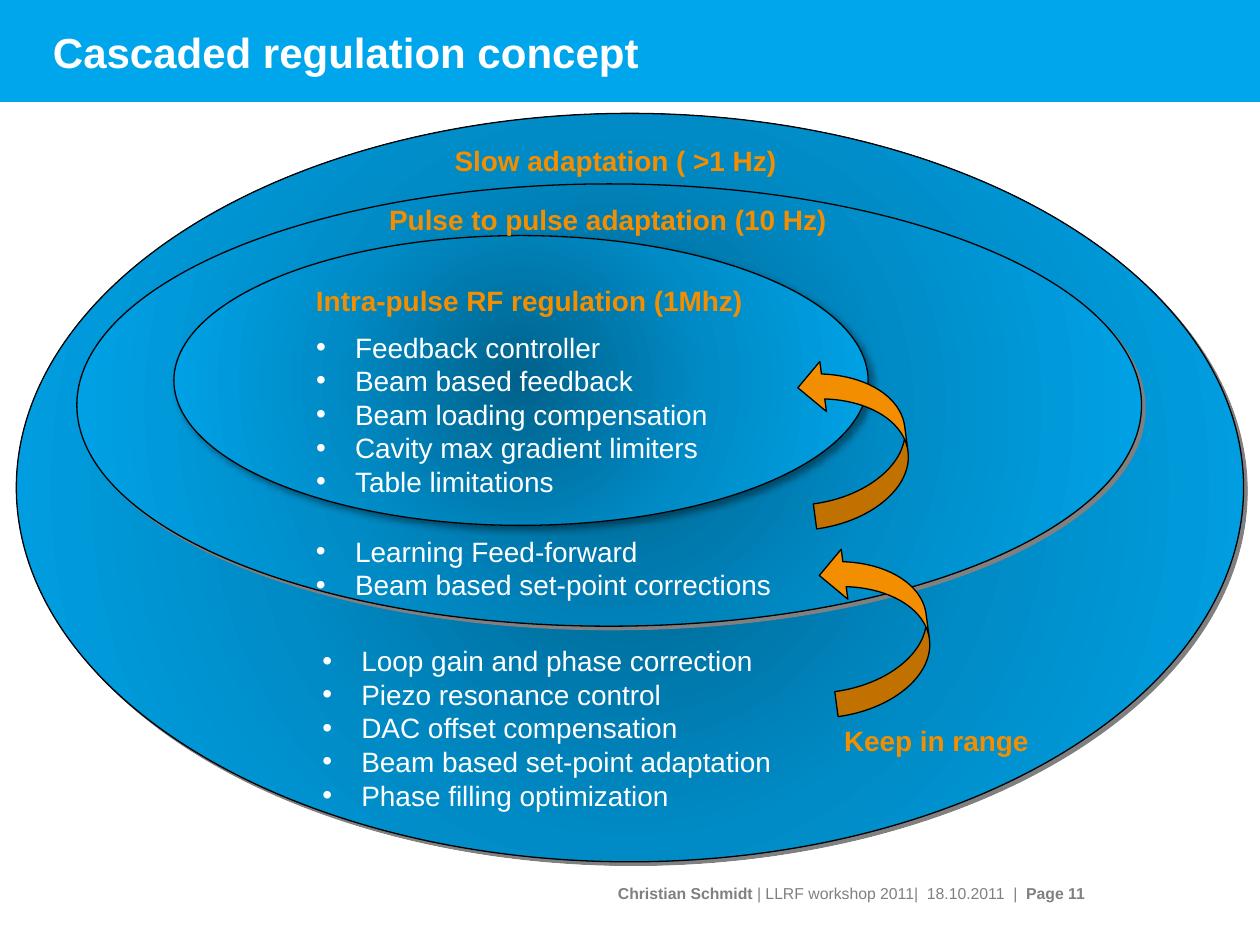
import lxml.etree
import pptx
import pptx.dml.color
import pptx.enum.shapes
import pptx.enum.text
import pptx.oxml
import pptx.oxml.ns
import pptx.util

Inches = pptx.util.Inches
Pt = pptx.util.Pt
Shape = pptx.enum.shapes.MSO_SHAPE
Align = pptx.enum.text.PP_ALIGN
Anchor = pptx.enum.text.MSO_ANCHOR
AutoSize = pptx.enum.text.MSO_AUTO_SIZE

FONT = "Arial"
BLUE, ORANGE, WHITE, BLACK, GREY = "00A6EB", "F28E00", "FFFFFF", "000000", "808080"
GRADIENT = [(0, "00628B"), (50, "008BC6"), (100, "00A5EB")]

# left, top, width, height, shadow colour, opacity %, blur pt, distance pt
LOOPS = [
    (0.13, 0.9, 9.74, 5.94, GREY, 100, 0, 2.8),
    (0.61, 1.46, 8.45, 3.51, GREY, 100, 0, 2.8),
    (1.38, 1.87, 5.51, 2.3, BLACK, 40, 4, 3),
]
LABELS = [
    (3.51, 1.09, 2.79, "Slow adaptation ( >1 Hz)"),
    (2.99, 1.56, 3.72, "Pulse to pulse adaptation (10 Hz)"),
    (2.41, 2.2, 3.63, "Intra-pulse RF regulation (1Mhz)"),
    (6.6, 5.69, 1.69, "Keep in range"),
]
LISTS = [
    (2.41, 2.57, 3.35, ["Feedback controller", "Beam based feedback",
                        "Beam loading compensation",
                        "Cavity max gradient limiters", "Table limitations"]),
    (2.41, 4.19, 3.86, ["Learning Feed-forward", "Beam based set-point corrections"]),
    (2.46, 5.06, 3.81, ["Loop gain and phase correction", "Piezo resonance control",
                        "DAC offset compensation", "Beam based set-point adaptation",
                        "Phase filling optimization"]),
]
ARROWS = [(6.39, 2.82), (6.56, 4.31)]


def rgb(value):
    return pptx.dml.color.RGBColor.from_string(value)


def set_font(font, size, color, bold=None):
    font.name = FONT
    font.size = Pt(size)
    font.color.rgb = rgb(color)
    font.bold = bold


def add_filled_shape(slide, kind, left, top, width, height, color, outlined=True):
    shape = slide.shapes.add_shape(
        kind, Inches(left), Inches(top), Inches(width), Inches(height))
    shape.shadow.inherit = False
    shape.fill.solid()
    shape.fill.fore_color.rgb = rgb(color)
    if outlined:
        shape.line.color.rgb = rgb(BLACK)
        shape.line.width = Pt(0.75)
    else:
        shape.line.fill.background()
    return shape


def set_radial_gradient(shape):
    stops = "".join(
        f'<a:gs pos="{position * 1000}"><a:srgbClr val="{color}"/></a:gs>'
        for position, color in GRADIENT)
    gradient = pptx.oxml.parse_xml(
        f'<a:gradFill {pptx.oxml.ns.nsdecls("a")} rotWithShape="1">'
        f'<a:gsLst>{stops}</a:gsLst><a:path path="circle">'
        '<a:fillToRect l="50000" t="50000" r="50000" b="50000"/>'
        '</a:path></a:gradFill>')
    properties = shape.element.spPr
    properties.replace(properties.find(pptx.oxml.ns.qn("a:solidFill")), gradient)


def set_shadow(shape, color, opacity, blur, distance):
    effects = shape.element.spPr.find(pptx.oxml.ns.qn("a:effectLst"))
    effects.append(pptx.oxml.parse_xml(
        f'<a:outerShdw {pptx.oxml.ns.nsdecls("a")} blurRad="{Pt(blur)}" '
        f'dist="{Pt(distance)}" dir="2700000" algn="ctr" rotWithShape="0">'
        f'<a:srgbClr val="{color}"><a:alpha val="{opacity * 1000}"/></a:srgbClr>'
        '</a:outerShdw>'))


def add_loop(slide, left, top, width, height, *shadow):
    ellipse = add_filled_shape(slide, Shape.OVAL, left, top, width, height, BLUE)
    set_radial_gradient(ellipse)
    set_shadow(ellipse, *shadow)


def add_bullet(para):
    properties = para._p.get_or_add_pPr()
    properties.set("marL", str(Inches(0.31)))
    properties.set("indent", str(-Inches(0.31)))
    for tag, name, value in (("a:buFont", "typeface", FONT), ("a:buChar", "char", "•")):
        bullet = lxml.etree.SubElement(properties, pptx.oxml.ns.qn(tag))
        bullet.set(name, value)


def add_lines(slide, left, top, width, lines, color, bold=False, bulleted=False):
    height = 0.1 + 0.27 * len(lines)
    box = slide.shapes.add_textbox(
        Inches(left), Inches(top), Inches(width), Inches(height))
    frame = box.text_frame
    frame.word_wrap = False
    frame.auto_size = AutoSize.SHAPE_TO_FIT_TEXT
    frame.text = "\n".join(lines)
    for para in frame.paragraphs:
        if bulleted:
            add_bullet(para)
        set_font(para.font, 16, color, bold)


def add_title(slide, text):
    title = slide.shapes.title
    title.left, title.top = Inches(0.32), Inches(0.11)
    title.width, title.height = Inches(9.32), Inches(0.6)
    frame = title.text_frame
    frame.text = text
    frame.auto_size = AutoSize.NONE
    frame.vertical_anchor = Anchor.MIDDLE
    para = frame.paragraphs[0]
    para.alignment = Align.LEFT
    set_font(para.font, 24, WHITE, True)
    slide.shapes._spTree.append(title.element)  # in front of the header bar


def add_footer(slide):
    box = slide.shapes.add_textbox(Inches(0.31), Inches(6.87), Inches(8.3), Inches(0.44))
    frame = box.text_frame
    frame.word_wrap = True
    frame.vertical_anchor = Anchor.MIDDLE
    frame.margin_right = 0
    para = frame.paragraphs[0]
    para.alignment = Align.RIGHT
    set_font(para.font, 9, GREY)
    for text, bold in (("Christian Schmidt ", True),
                       ("| LLRF workshop 2011|  18.10.2011  |  ", False),
                       ("Page 11", True)):
        span = para.add_run()
        span.text = text
        span.font.bold = bold


def main():
    deck = pptx.Presentation()
    deck.slide_width, deck.slide_height = Inches(10), Inches(7.5)
    slide = deck.slides.add_slide(deck.slide_layouts.get_by_name("Title Only"))

    add_filled_shape(slide, Shape.RECTANGLE, 0, 0, 10, 0.81, BLUE, outlined=False)
    add_title(slide, "Cascaded regulation concept")
    add_footer(slide)
    for loop in LOOPS:
        add_loop(slide, *loop)
    for left, top, width, text in LABELS:
        add_lines(slide, left, top, width, [text], ORANGE, bold=True)
    for left, top, width, lines in LISTS:
        add_lines(slide, left, top, width, lines, WHITE, bulleted=True)
    for left, top in ARROWS:
        arrow = add_filled_shape(
            slide, Shape.CURVED_RIGHT_ARROW, left, top, 0.8, 1.33, ORANGE)
        arrow.rotation = 172.4

    deck.save("out.pptx")


if __name__ == "__main__":
    main()
